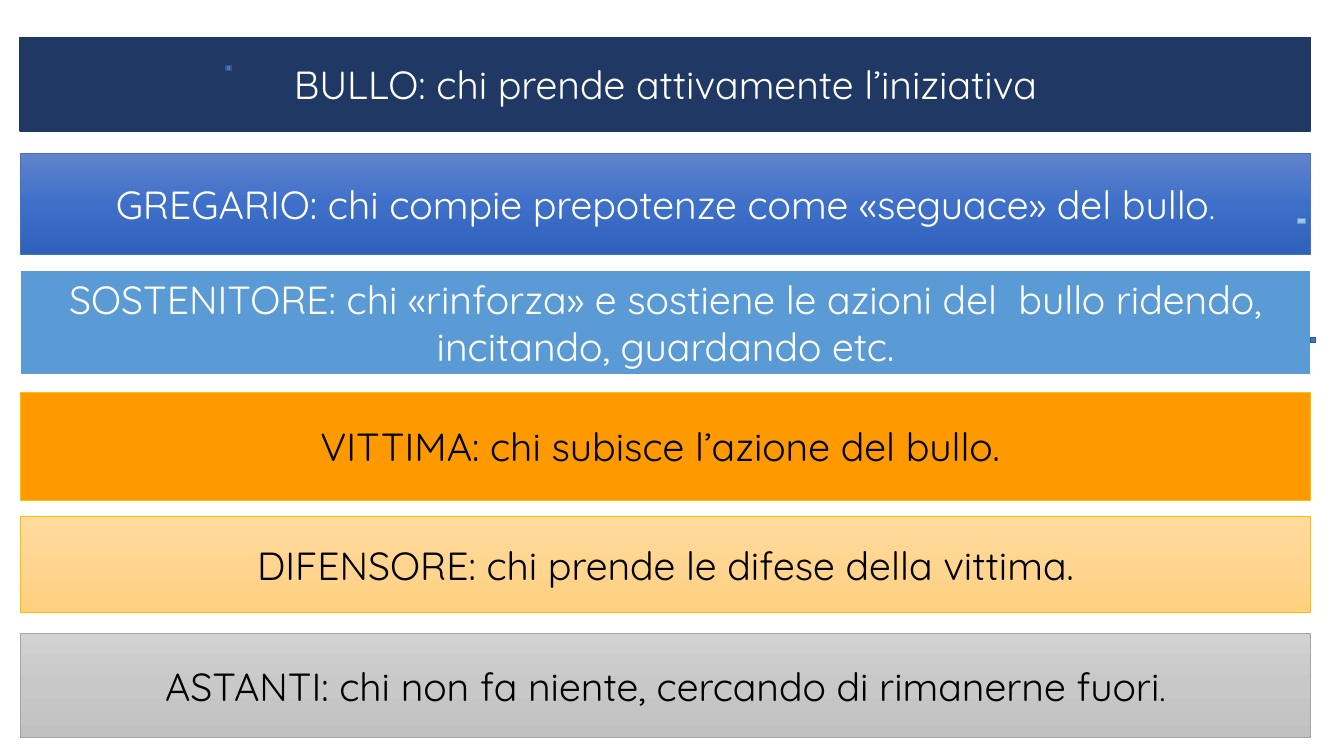
from copy import deepcopy
from dataclasses import dataclass

from pptx import Presentation
from pptx.dml.color import RGBColor
from pptx.enum.shapes import MSO_SHAPE
from pptx.enum.text import MSO_ANCHOR, PP_ALIGN
from pptx.oxml.ns import qn
from pptx.shapes.autoshape import Shape
from pptx.slide import Slide
from pptx.util import Inches, Pt


@dataclass(frozen=True)
class Theme:
    font: str = "Quicksand"
    stop_font: str = "Calibri"
    size: int = 28
    stop_size: int = 18
    white: str = "FFFFFF"
    black: str = "000000"
    navy: str = "203864"
    blue: str = "4472C4"
    dark_blue: str = "325491"
    sky: str = "5B9BD5"
    orange: str = "FF9900"
    gold: str = "FFC000"
    grey: str = "A5A5A5"
    blue_fade: tuple[str, ...] = ("6183CB", "3E70CA", "3062BB")
    sky_fade: tuple[str, ...] = ("B1CBE9", "A3C1E5", "93B9E4")
    gold_fade: tuple[str, ...] = ("FFDB9E", "FFD590", "FFD07C")
    grey_fade: tuple[str, ...] = ("D2D2D2", "C8C8C8", "C0C0C0")


THEME = Theme()
BAND_LEFT, BAND_WIDTH = 0.2, 12.8


@dataclass(frozen=True)
class Box:
    left: float
    top: float
    width: float
    height: float
    fill: tuple[str, ...]  # one colour, or three for a vertical fade
    line: str
    line_width: float = 0.5


@dataclass(frozen=True)
class Role:
    box: Box
    text: str
    color: str
    small_stop: str = ""


def band(top: float, height: float, fill: tuple[str, ...], line: str,
         line_width: float = 0.5) -> Box:
    return Box(BAND_LEFT, top, BAND_WIDTH, height, fill, line, line_width)


ROLES = (
    Role(band(0.37, 0.93, (THEME.navy,), THEME.navy, 1),
         "BULLO: chi prende attivamente l’iniziativa", THEME.white),
    Role(band(1.52, 1, THEME.blue_fade, THEME.blue),
         "GREGARIO: chi compie prepotenze come «seguace» del bullo", THEME.white, "."),
    Role(band(2.68, 1.04, (THEME.sky,), THEME.white, 1.5),
         "SOSTENITORE: chi «rinforza» e sostiene le azioni del  bullo ridendo, "
         "incitando, guardando etc.", THEME.white),
    Role(band(3.89, 1.07, (THEME.orange,), THEME.gold),
         "VITTIMA: chi subisce l’azione del bullo. ", THEME.black),
    Role(band(5.12, 0.96, THEME.gold_fade, THEME.gold),
         "DIFENSORE: chi prende le difese della vittima.", THEME.black),
    Role(band(6.28, 1.04, THEME.grey_fade, THEME.grey),
         "ASTANTI: chi non fa niente, cercando di rimanerne fuori", THEME.black, "."),
)

MARKS = (
    Box(2.24, 0.65, 0.05, 0.05, (THEME.blue,), THEME.dark_blue, 1),
    Box(13, 3.35, 0.05, 0.05, (THEME.blue,), THEME.dark_blue, 1),
    Box(12.87, 2.17, 0.08, 0.05, THEME.sky_fade, THEME.sky),
)


def fade(shape: Shape, colors: tuple[str, ...]) -> None:
    """Fill from top to bottom with evenly spaced colours."""
    shape.fill.gradient()
    shape.fill.gradient_angle = 270
    stop_list = shape._element.spPr.find(qn("a:gradFill")).find(qn("a:gsLst"))
    while len(stop_list) < len(colors):
        stop_list.append(deepcopy(stop_list[0]))
    for index, (stop, color) in enumerate(zip(shape.fill.gradient_stops, colors)):
        stop.position = index / (len(colors) - 1)
        stop.color.rgb = RGBColor.from_string(color)


def draw_box(slide: Slide, box: Box) -> Shape:
    shape = slide.shapes.add_shape(
        MSO_SHAPE.RECTANGLE, Inches(box.left), Inches(box.top),
        Inches(box.width), Inches(box.height))
    shape.shadow.inherit = False
    if len(box.fill) > 1:
        fade(shape, box.fill)
    else:
        shape.fill.solid()
        shape.fill.fore_color.rgb = RGBColor.from_string(box.fill[0])
    shape.line.color.rgb = RGBColor.from_string(box.line)
    shape.line.width = Pt(box.line_width)
    return shape


def draw_role(slide: Slide, role: Role) -> None:
    frame = draw_box(slide, role.box).text_frame
    frame.text = role.text
    frame.word_wrap = True
    frame.vertical_anchor = MSO_ANCHOR.MIDDLE
    sentence = frame.paragraphs[0]
    sentence.alignment = PP_ALIGN.CENTER
    if role.small_stop:
        sentence.add_run().text = role.small_stop
    styles = ((THEME.font, THEME.size), (THEME.stop_font, THEME.stop_size))
    for run, (font, size) in zip(sentence.runs, styles):
        run.font.name = font
        run.font.size = Pt(size)
        run.font.color.rgb = RGBColor.from_string(role.color)


def main() -> None:
    deck = Presentation()
    deck.slide_width, deck.slide_height = Inches(13.33), Inches(7.5)
    slide = deck.slides.add_slide(deck.slide_layouts[6])

    # Bands, one for each role
    for role in ROLES:
        draw_role(slide, role)

    # Small marks on top of the bands
    for mark in MARKS:
        draw_box(slide, mark)

    deck.save("out.pptx")


if __name__ == "__main__":
    main()
